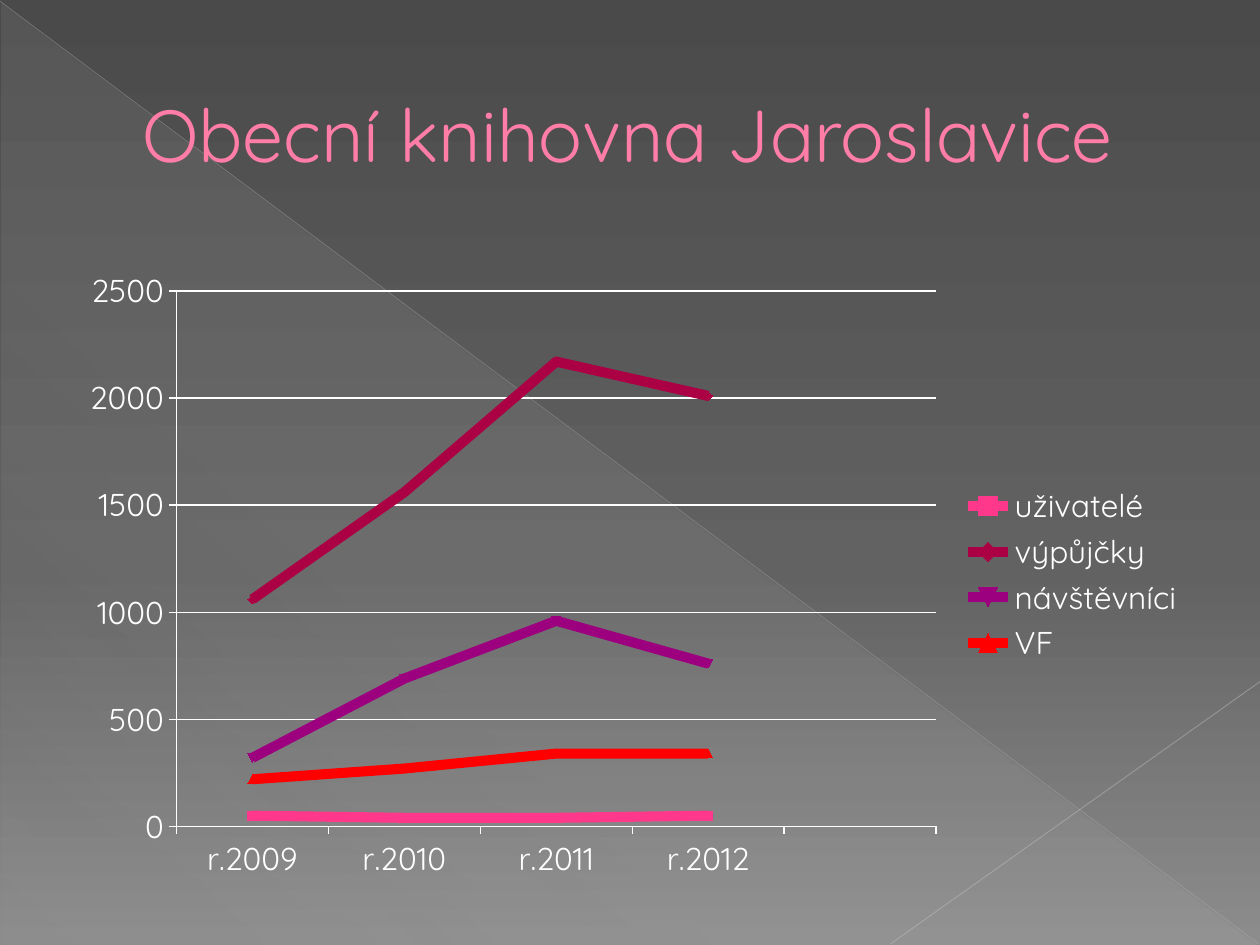
from lxml.etree import SubElement
from pptx import Presentation
from pptx.chart.data import CategoryChartData
from pptx.dml.color import RGBColor
from pptx.enum.chart import XL_CHART_TYPE, XL_LEGEND_POSITION, XL_TICK_MARK
from pptx.enum.shapes import MSO_CONNECTOR, MSO_SHAPE
from pptx.enum.text import MSO_ANCHOR
from pptx.oxml import parse_xml
from pptx.oxml.ns import nsdecls, qn
from pptx.util import Inches, Pt

COLORS = {
    "title": "FF7DA7", "title_outline": "B12761", "text": "FFFFFF",
    "triangle": "D2D2D2", "long_line": "BFBFBF", "short_line": "C6C6C6",
    "top": "4A4A4A", "middle": "626262", "bottom": "8C8C8C",
    "uživatelé": "FF388C", "výpůjčky": "AB0043",
    "návštěvníci": "9C007F", "VF": "FF0000",
}
FONT = "Quicksand"


def color(name):
    return RGBColor.from_string(COLORS[name])


def set_gradient(owner, stops, angle):
    """Fill in owner's gradient; stops are (position %, colour name, opacity %)."""
    gradient = owner.find(".//" + qn("a:gradFill"))
    stop_list = gradient.find(qn("a:gsLst"))
    for old_stop in list(stop_list):
        stop_list.remove(old_stop)
    for position, name, opacity in stops:
        stop = SubElement(stop_list, qn("a:gs"), pos=str(position * 1000))
        tone = SubElement(stop, qn("a:srgbClr"), val=COLORS[name])
        if opacity < 100:
            SubElement(tone, qn("a:alpha"), val=str(opacity * 1000))
    gradient.find(qn("a:lin")).set("ang", str(angle * 60000))


deck = Presentation()
deck.slide_width, deck.slide_height = Inches(10), Inches(7.5)
page = deck.slides.add_slide(deck.slide_layouts[6])

# Background
page.background.fill.gradient()
set_gradient(page.element, [(0, "top", 100), (60, "middle", 100), (100, "bottom", 100)], 90)

triangle = page.shapes.add_shape(
    MSO_SHAPE.RIGHT_TRIANGLE, Inches(0.01), Inches(0.02), Inches(9.98), Inches(7.48))
triangle.shadow.inherit = False
triangle.line.fill.background()
triangle.fill.gradient()
set_gradient(triangle.element,
             [(0, "triangle", 10), (70, "triangle", 8), (100, "triangle", 1)], 133)

for x1, y1, x2, y2, name, width, opacity in [
    (0, 0.01, 9.99, 7.49, "long_line", 0.39, 35),
    (10, 5.41, 7.07, 7.49, "short_line", 0.47, 45),
]:
    line = page.shapes.add_connector(
        MSO_CONNECTOR.STRAIGHT, Inches(x1), Inches(y1), Inches(x2), Inches(y2))
    line.line.width = Pt(width)
    line.line.color.rgb = color(name)
    properties = line.element.spPr
    tone = properties.find(".//" + qn("a:srgbClr"))
    SubElement(tone, qn("a:alpha"), val=str(opacity * 1000))
    SubElement(properties, qn("a:effectLst"))

# Title
box = page.shapes.add_textbox(Inches(0.5), Inches(0.29), Inches(9), Inches(1.53))
box.text_frame.word_wrap = True
box.text_frame.vertical_anchor = MSO_ANCHOR.MIDDLE
para = box.text_frame.paragraphs[0]
para._p.get_or_add_pPr().set("marL", str(Inches(0.53)))
span = para.add_run()
span.text = "Obecní knihovna Jaroslavice"
span.font.name = FONT
span.font.size = Pt(42)
span.font.color.rgb = color("title")
span._r.get_or_add_rPr().insert(0, parse_xml(
    f'<a:ln {nsdecls("a")} w="{Pt(0.5)}"><a:solidFill>'
    f'<a:srgbClr val="{COLORS["title_outline"]}"/></a:solidFill></a:ln>'))

# Chart; the fifth category is left open
data = CategoryChartData()
data.categories = ["r.2009", "r.2010", "r.2011", "r.2012", ""]
data.add_series("uživatelé", [50, 40, 40, 50, None])
data.add_series("výpůjčky", [1060, 1560, 2170, 2010, None])
data.add_series("návštěvníci", [320, 690, 960, 760, None])
data.add_series("VF", [220, 270, 340, 340, None])
chart = page.shapes.add_chart(
    XL_CHART_TYPE.LINE_MARKERS, Inches(0.5), Inches(2.06), Inches(9), Inches(5), data).chart
chart.has_title = False
chart.font.name = FONT
chart.font.size = Pt(18)
chart.font.color.rgb = color("text")
chart.has_legend = True
chart.legend.position = XL_LEGEND_POSITION.RIGHT
chart.legend.include_in_layout = False

plot = chart.plots[0]
plot.vary_by_categories = False
for series in plot.series:
    series.smooth = False
    series.format.line.width = Pt(5.75)
    series.format.line.color.rgb = color(series.name)
    series.marker.format.fill.solid()
    series.marker.format.fill.fore_color.rgb = color(series.name)
    series.marker.format.line.color.rgb = color(series.name)

values = chart.value_axis
values.minimum_scale, values.maximum_scale, values.major_unit = 0, 2500, 500
values.has_major_gridlines = True
for axis in (chart.category_axis, values):
    axis.major_tick_mark = XL_TICK_MARK.OUTSIDE
for part in (chart.category_axis, values, values.major_gridlines):
    part.format.line.width = Pt(0.75)
    part.format.line.color.rgb = color("text")

plot_area = chart.element.find(".//" + qn("c:plotArea"))
for old_layout in plot_area.findall(qn("c:layout")):
    plot_area.remove(old_layout)
plot_area.insert(0, parse_xml(
    f'<c:layout {nsdecls("c")}><c:manualLayout><c:layoutTarget val="inner"/>'
    '<c:xMode val="edge"/><c:yMode val="edge"/>'
    '<c:x val="0.1"/><c:y val="0.05"/><c:w val="0.67"/><c:h val="0.85"/>'
    '</c:manualLayout></c:layout>'))

deck.save("out.pptx")
